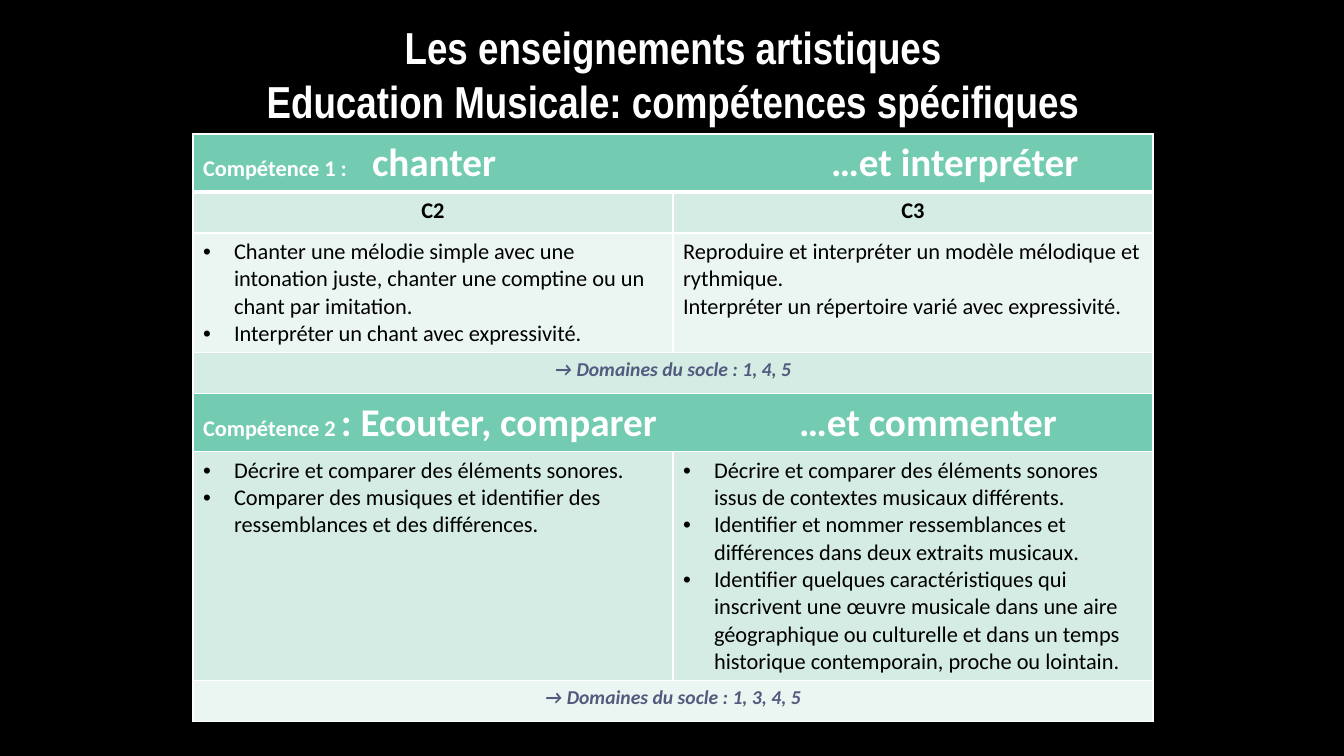
from dataclasses import dataclass

from lxml import etree
from pptx import Presentation
from pptx.dml.color import RGBColor
from pptx.enum.text import MSO_ANCHOR, MSO_AUTO_SIZE, PP_ALIGN
from pptx.oxml.ns import qn
from pptx.util import Emu, Pt

CENTER, LEFT = PP_ALIGN.CENTER, PP_ALIGN.LEFT
TOP = MSO_ANCHOR.TOP
NO_AUTOFIT = MSO_AUTO_SIZE.NONE

EMU_PER_PX = 914400 / 100.8
TITLE_FONT, BODY_FONT = "Arial Narrow", "Calibri"
BLACK, WHITE, SLATE = "000000", "FFFFFF", "525B7E"
GREEN, MINT, PALE = "73CBB2", "D5ECE4", "EBF6F2"
COLUMN_WIDTH = 480
BULLET_INDENT = 31


@dataclass(frozen=True)
class Style:
    size: int
    color: str
    bold: bool = False
    italic: bool = False
    align: PP_ALIGN = LEFT
    bullet: bool = False


@dataclass(frozen=True)
class Line:
    segments: tuple[tuple[str, int], ...]  # text and size in points
    style: Style
    tabs: tuple[int, ...] = ()


@dataclass(frozen=True)
class Row:
    height: int
    fill: str
    cells: tuple[tuple[Line, ...], ...]  # one cell spans the whole row
    bottom_border: int = 1


HEADING = Style(16, WHITE, bold=True)
CYCLE = Style(16, BLACK, bold=True, align=CENTER)
BODY = Style(16, BLACK)
BULLET = Style(16, BLACK, bullet=True)
DOMAIN = Style(14, SLATE, bold=True, italic=True, align=CENTER)


def px(value: float) -> Emu:
    return Emu(round(value * EMU_PER_PX))


def rgb(color: str) -> RGBColor:
    return RGBColor.from_string(color)


def lines(style: Style, *texts: str) -> tuple[Line, ...]:
    return tuple(Line(((text, style.size),), style) for text in texts)


def heading(tabs: tuple[int, ...], *segments: tuple[str, int]) -> tuple[Line, ...]:
    return (Line(segments, HEADING, tabs),)


# Table content
ROWS = (
    Row(58, GREEN, (heading((169, 628), ("Compétence 1 :\t", 16), ("chanter", 28),
                            ("\t", 16), ("…et interpréter", 28)),), 3),
    Row(41, MINT, (lines(CYCLE, "C2"), lines(CYCLE, "C3"))),
    Row(119, PALE, (
        lines(BULLET,
              "Chanter une mélodie simple avec une intonation juste, "
              "chanter une comptine ou un chant par imitation.",
              "Interpréter un chant avec expressivité."),
        lines(BODY,
              "Reproduire et interpréter un modèle mélodique et rythmique.",
              "Interpréter un répertoire varié avec expressivité."))),
    Row(41, MINT, (lines(DOMAIN, "→ Domaines du socle : 1, 4, 5"),)),
    Row(58, GREEN, (heading((596,), ("Compétence 2 ", 16),
                            (": Ecouter, comparer\t…et commenter", 28)),)),
    Row(229, MINT, (
        lines(BULLET,
              "Décrire et comparer des éléments sonores.",
              "Comparer des musiques et identifier des ressemblances "
              "et des différences."),
        lines(BULLET,
              "Décrire et comparer des éléments sonores issus de contextes "
              "musicaux différents.",
              "Identifier et nommer ressemblances et différences dans deux "
              "extraits musicaux.",
              "Identifier quelques caractéristiques qui inscrivent une œuvre "
              "musicale dans une aire géographique ou culturelle et dans un "
              "temps historique contemporain, proche ou lointain."))),
    Row(41, PALE, (lines(DOMAIN, "→ Domaines du socle : 1, 3, 4, 5"),)),
)


def write_line(paragraph, line: Line) -> None:
    style = line.style
    properties = paragraph._p.get_or_add_pPr()
    if style.bullet:
        properties.set("marL", str(px(BULLET_INDENT)))
        properties.set("indent", str(-px(BULLET_INDENT)))
        etree.SubElement(properties, qn("a:buFont"), typeface="Arial")
        etree.SubElement(properties, qn("a:buChar"), char="•")
    if line.tabs:
        tab_list = etree.SubElement(properties, qn("a:tabLst"))
        for position in line.tabs:
            etree.SubElement(tab_list, qn("a:tab"), pos=str(px(position)), algn="l")
    paragraph.alignment = style.align
    font = paragraph.font
    font.name, font.size = BODY_FONT, Pt(style.size)
    font.bold, font.italic = style.bold, style.italic
    font.color.rgb = rgb(style.color)
    for text, size in line.segments:
        run = paragraph.add_run()
        run.text = text
        if size != style.size:
            run.font.size = Pt(size)


def format_cell(cell, fill: str, top: int, bottom: int) -> None:
    cell.fill.solid()
    cell.fill.fore_color.rgb = rgb(fill)
    properties = cell._tc.get_or_add_tcPr()
    borders = (("a:lnL", 1), ("a:lnR", 1), ("a:lnT", top), ("a:lnB", bottom))
    for index, (tag, width) in enumerate(borders):
        border = etree.Element(qn(tag), w=str(Pt(width)))
        solid = etree.SubElement(border, qn("a:solidFill"))
        etree.SubElement(solid, qn("a:srgbClr"), val=WHITE)
        properties.insert(index, border)


def add_title(slide) -> None:
    title = slide.shapes.title
    title.left, title.top, title.width, title.height = map(px, (220, 15, 907, 109))
    frame = title.text_frame
    frame.auto_size, frame.vertical_anchor = NO_AUTOFIT, TOP
    paragraph = frame.paragraphs[0]
    paragraph.text = ("Les enseignements artistiques\v"
                      "Education Musicale: compétences spécifiques")
    paragraph.alignment = CENTER
    font = paragraph.font
    font.name, font.size, font.bold = TITLE_FONT, Pt(32), True
    font.color.rgb = rgb(WHITE)


def add_skills_table(slide) -> None:
    height = sum(row.height for row in ROWS)
    table = slide.shapes.add_table(len(ROWS), 2, px(193), px(134),
                                   px(2 * COLUMN_WIDTH), px(height)).table
    table.first_row = table.horz_banding = False
    for column in table.columns:
        column.width = px(COLUMN_WIDTH)
    top_border = 1
    for index, row in enumerate(ROWS):
        table.rows[index].height = px(row.height)
        for column in range(2):
            format_cell(table.cell(index, column), row.fill,
                        top_border, row.bottom_border)
        top_border = row.bottom_border
        if len(row.cells) == 1:
            table.cell(index, 0).merge(table.cell(index, 1))
        for column, content in enumerate(row.cells):
            frame = table.cell(index, column).text_frame
            for number, line in enumerate(content):
                paragraph = frame.add_paragraph() if number else frame.paragraphs[0]
                write_line(paragraph, line)


def main() -> None:
    presentation = Presentation()
    presentation.slide_width, presentation.slide_height = px(1344), px(756)
    title_only = presentation.slide_layouts[5]
    slide = presentation.slides.add_slide(title_only)
    slide.background.fill.solid()
    slide.background.fill.fore_color.rgb = rgb(BLACK)
    add_title(slide)
    add_skills_table(slide)
    presentation.save("out.pptx")


if __name__ == "__main__":
    main()
